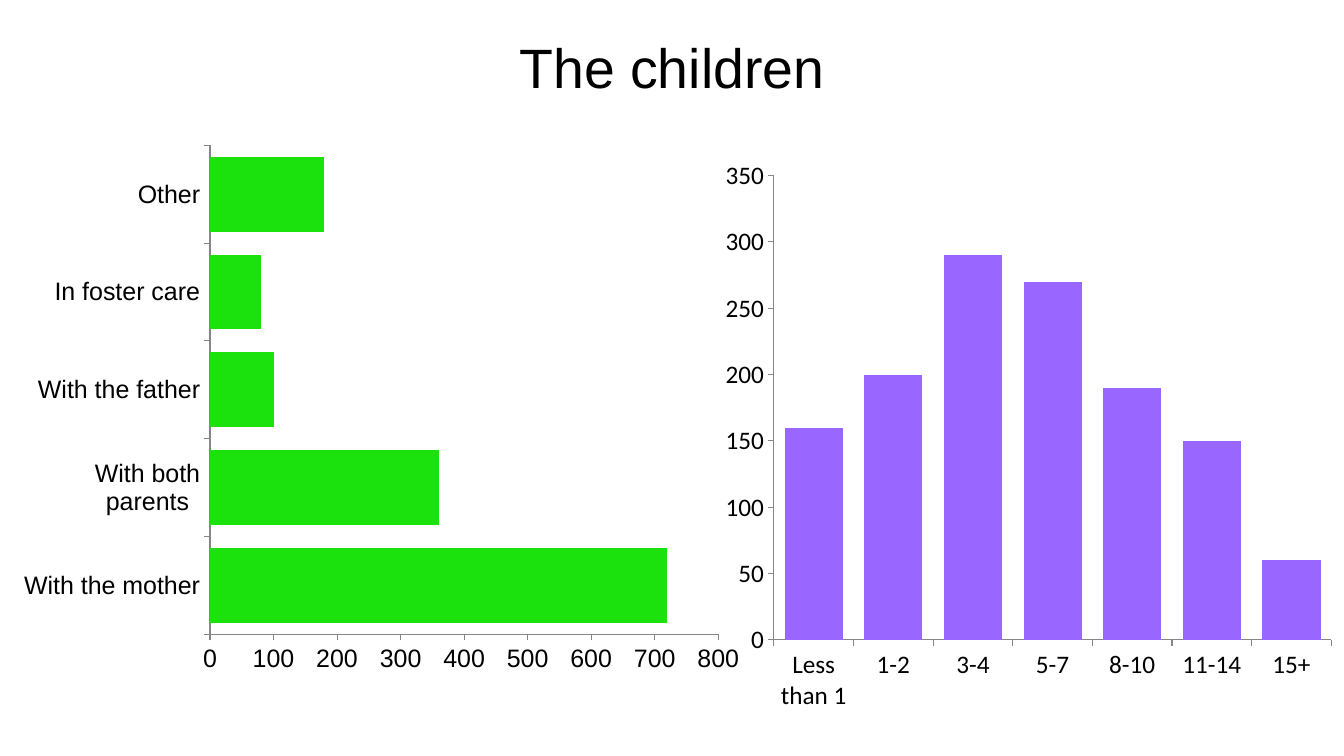
from lxml import etree
from pptx import Presentation
from pptx import util as u
from pptx.chart.data import CategoryChartData
from pptx.dml.color import RGBColor
from pptx.enum import chart as charts, text
from pptx.oxml.ns import qn

BLACK = RGBColor(0x00, 0x00, 0x00)
AXIS_GREY = RGBColor(0x86, 0x86, 0x86)
GREEN = RGBColor(0x1B, 0xE2, 0x0C)
PURPLE = RGBColor(0x99, 0x66, 0xFF)

PX = 914400 / 100.8
TITLE_ONLY = 5

AGES = {"Less than 1": 160, "1-2": 200, "3-4": 290, "5-7": 270,
        "8-10": 190, "11-14": 150, "15+": 60}
LIVING_WITH = {"With the mother": 720, "With both parents": 360,
               "With the father": 100, "In foster care": 80, "Other": 180}


def emu(*lengths):
    return [u.Emu(round(length * PX)) for length in lengths]


class Deck:
    def __init__(self, width, height):
        self.prs = Presentation()
        self.prs.slide_width, self.prs.slide_height = emu(width, height)
        self.slide = self.prs.slides.add_slide(self.prs.slide_layouts[TITLE_ONLY])

    def title(self, wording, box):
        heading = self.slide.shapes.title
        heading.left, heading.top, heading.width, heading.height = emu(*box)
        frame = heading.text_frame
        frame.text = wording
        frame.vertical_anchor = text.MSO_ANCHOR.MIDDLE
        frame.paragraphs[0].alignment = text.PP_ALIGN.CENTER
        font = frame.paragraphs[0].runs[0].font
        font.name, font.size = "Arial", u.Pt(39.6)
        font.color.rgb = BLACK

    def bars(self, kind, counts, box, color, font_name, gap, top, step):
        """Add a one-series bar chart whose value axis runs from 0 to top."""
        data = CategoryChartData()
        data.categories = list(counts)
        data.add_series("Series 1", list(counts.values()))
        chart = self.slide.shapes.add_chart(kind, *emu(*box), data).chart
        chart.has_legend = chart.has_title = False
        chart.font.name, chart.font.size = font_name, u.Pt(18)
        chart.font.color.rgb = BLACK

        plot = chart.plots[0]
        plot.vary_by_categories = False
        plot.gap_width = gap
        fill = plot.series[0].format.fill
        fill.solid()
        fill.fore_color.rgb = color

        for axis in (chart.category_axis, chart.value_axis):
            axis.has_major_gridlines = False
            axis.major_tick_mark = charts.XL_TICK_MARK.OUTSIDE
            axis.minor_tick_mark = charts.XL_TICK_MARK.NONE
            axis.format.line.color.rgb = AXIS_GREY
            axis.format.line.width = u.Pt(0.75)
        values = chart.value_axis
        values.minimum_scale, values.maximum_scale = 0, top
        values.major_unit = step
        return chart

    def place_plot(self, chart, x, y, w, h):
        """Fix the inner plot area, in fractions of the chart."""
        area = chart.plots[0]._element.getparent()
        for old in area.findall(qn("c:layout")):
            area.remove(old)
        layout = etree.Element(qn("c:layout"))
        manual = etree.SubElement(layout, qn("c:manualLayout"))
        settings = {"layoutTarget": "inner", "xMode": "edge", "yMode": "edge",
                    "x": x, "y": y, "w": w, "h": h}
        for tag, value in settings.items():
            etree.SubElement(manual, qn(f"c:{tag}")).set("val", str(value))
        area.insert(0, layout)


def main():
    deck = Deck(1344, 756)
    deck.title("The children", (67, 30, 1210, 73))
    deck.bars(charts.XL_CHART_TYPE.COLUMN_CLUSTERED, AGES, (713, 149, 631, 573),
              PURPLE, "Calibri", gap=37, top=350, step=50)
    living = deck.bars(charts.XL_CHART_TYPE.BAR_CLUSTERED, LIVING_WITH,
                       (24, 116, 723, 589), GREEN, "Arial", gap=31, top=800, step=100)
    deck.place_plot(living, 0.25, 0.05, 0.71, 0.83)
    deck.prs.save("out.pptx")


if __name__ == "__main__":
    main()
